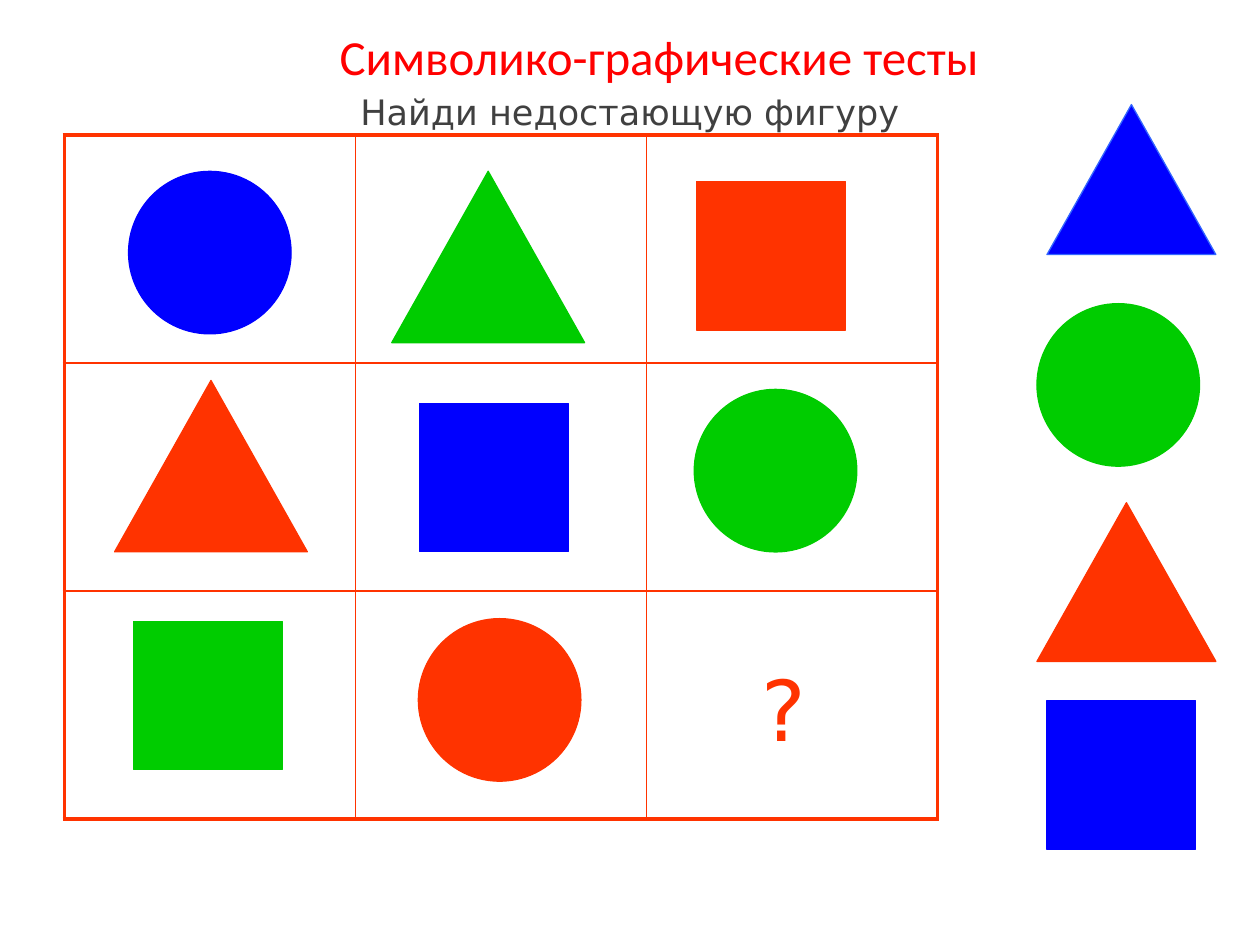
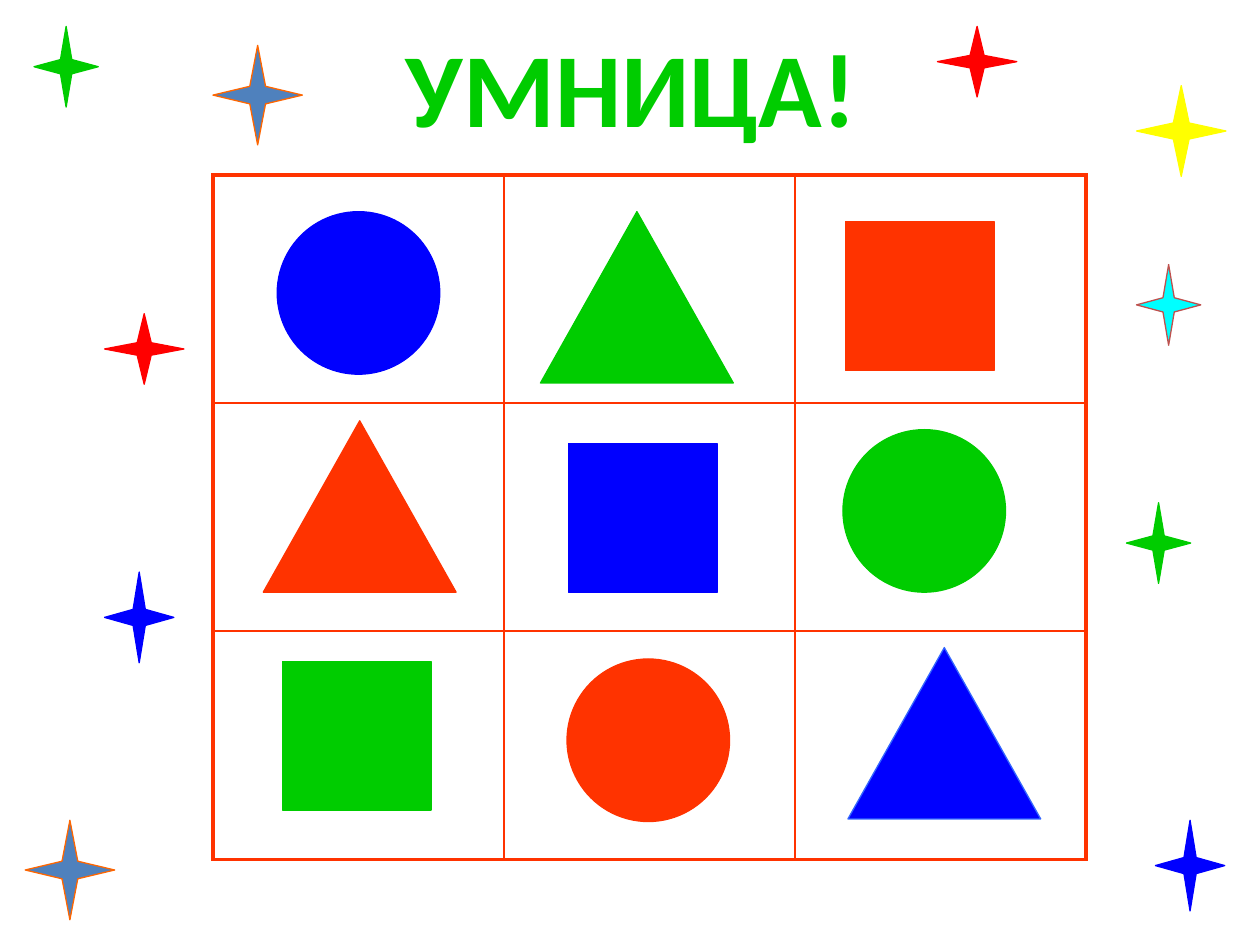
from lxml.etree import SubElement
from pptx import Presentation
from pptx.dml.color import RGBColor
from pptx.enum.shapes import MSO_SHAPE
from pptx.enum.text import MSO_ANCHOR, PP_ALIGN
from pptx.oxml.ns import qn
from pptx.util import Pt

PX = 9144  # 100 px to the inch
PAGE_SIZE = (1000, 750)

COLORS = {
    "white": "FFFFFF", "grey": "404040", "red": "FF0000", "scarlet": "FF3300",
    "green": "00CC00", "blue": "0000FF", "sky": "3366FF", "yellow": "FFFF00",
    "cyan": "00FFFF", "steel": "4F81BD", "orange": "FF6600", "brick": "C0504D",
}

GRID = 3
CELL_SIZE = (231, 181)
OUTER_LINE, INNER_LINE = 2.25, 1

KINDS = {
    "circle": (MSO_SHAPE.OVAL, (129, 129)),
    "square": (MSO_SHAPE.RECTANGLE, (118, 118)),
    "triangle": (MSO_SHAPE.ISOSCELES_TRIANGLE, (153, 136)),
}

# kind, fill, position from the board's corner
PUZZLE = [
    ("circle", "blue", (51, 29)),
    ("triangle", "green", (260, 29)),
    ("square", "scarlet", (502, 37)),
    ("triangle", "scarlet", (40, 195)),
    ("square", "blue", (282, 213)),
    ("circle", "green", (500, 202)),
    ("square", "green", (55, 386)),
    ("circle", "scarlet", (281, 384)),
]
SOLUTION = ("triangle", "blue", (504, 375))

# kind, fill, line, position, size
CHOICES = [
    ("triangle", "blue", "sky", (831, 83), (134, 119)),
    ("circle", "green", "green", (823, 241), (129, 129)),
    ("triangle", "scarlet", "scarlet", (823, 399), (142, 126)),
    ("square", "blue", "blue", (831, 556), (118, 118)),
]

# fill, line, size, positions
STARS = [
    ("red", "red", (63, 56), [(744, 21), (83, 249)]),
    ("blue", "blue", (55, 72), [(83, 454), (917, 651)]),
    ("yellow", "yellow", (71, 72), [(902, 68)]),
    ("green", "green", (51, 64), [(27, 21), (894, 399)]),
    ("steel", "orange", (71, 79), [(20, 651), (169, 36)]),
    ("cyan", "brick", (51, 64), [(902, 210)]),
]


def rgb(name):
    return RGBColor.from_string(COLORS[name])


def emu(*lengths):
    return [length * PX for length in lengths]


def write(box, text, *, size, color, font="Calibri", bold=False,
          anchor=MSO_ANCHOR.TOP, before=0):
    frame = box.text_frame
    frame.word_wrap = True
    frame.vertical_anchor = anchor
    para = frame.paragraphs[0]
    para.alignment = PP_ALIGN.CENTER
    para.space_before = Pt(before)
    span = para.add_run()
    span.text = text
    span.font.size = Pt(size)
    span.font.name = font
    span.font.bold = bold
    span.font.color.rgb = rgb(color)


def add_page(deck, title, place, **text_format):
    page = deck.slides.add_slide(deck.slide_layouts[5])
    box = page.shapes.title
    box.left, box.top, box.width, box.height = emu(*place)
    write(box, title, **text_format)
    return page


def add_label(page, text, place, **text_format):
    write(page.shapes.add_textbox(*emu(*place)), text, **text_format)


def add_figure(page, preset, fill, line, position, size):
    figure = page.shapes.add_shape(preset, *emu(*position, *size))
    figure.shadow.inherit = False
    figure.fill.solid()
    figure.fill.fore_color.rgb = rgb(fill)
    figure.line.color.rgb = rgb(line)
    figure.line.width = Pt(0.75)
    return figure


def set_borders(cell, widths):
    """Draw the cell's left, right, top and bottom lines, widths in points."""
    properties = cell._tc.get_or_add_tcPr()
    for index, (side, width) in enumerate(zip("LRTB", widths)):
        line = SubElement(properties, qn(f"a:ln{side}"), w=str(Pt(width)))
        fill = SubElement(line, qn("a:solidFill"))
        SubElement(fill, qn("a:srgbClr"), val=COLORS["scarlet"])
        properties.insert(index, line)


def add_board(page, corner, figures):
    """Draw the square grid with its figures placed from the corner."""
    size = [GRID * length for length in CELL_SIZE]
    table = page.shapes.add_table(GRID, GRID, *emu(*corner, *size)).table
    table.first_row = table.horz_banding = False
    for index in range(GRID):
        table.columns[index].width, table.rows[index].height = emu(*CELL_SIZE)
    for row in range(GRID):
        for column in range(GRID):
            cell = table.cell(row, column)
            cell.fill.solid()
            cell.fill.fore_color.rgb = rgb("white")
            edges = (column == 0, column == GRID - 1, row == 0, row == GRID - 1)
            set_borders(cell, [OUTER_LINE if edge else INNER_LINE for edge in edges])
    for kind, color, offset in figures:
        preset, figure_size = KINDS[kind]
        position = [start + step for start, step in zip(corner, offset)]
        line = "sky" if (kind, color) == ("triangle", "blue") else color
        add_figure(page, preset, color, line, position, figure_size)


def build_puzzle(deck):
    page = add_page(deck, "Символико-графические тесты", (195, 16, 656, 57),
                    size=28, color="red")
    add_label(page, "Найди недостающую фигуру", (75, 70, 850, 37), size=20,
              color="grey", font="DejaVu Sans", anchor=MSO_ANCHOR.MIDDLE)
    add_board(page, (51, 107), PUZZLE)
    for kind, fill, line, position, size in CHOICES:
        add_figure(page, KINDS[kind][0], fill, line, position, size)
    add_label(page, "?", (563, 517, 118, 90), size=48, color="scarlet",
              font="DejaVu Sans", before=3)


def build_answer(deck):
    page = add_page(deck, "УМНИЦА!", (130, 13, 742, 110),
                    size=60, color="green", bold=True, before=3)
    add_board(page, (169, 139), PUZZLE + [SOLUTION])
    for fill, line, size, positions in STARS:
        for position in positions:
            star = add_figure(page, MSO_SHAPE.STAR_4_POINT, fill, line, position, size)
            star.adjustments[0] = 0.125


def main():
    deck = Presentation()
    deck.slide_width, deck.slide_height = emu(*PAGE_SIZE)
    build_puzzle(deck)
    build_answer(deck)
    deck.save("out.pptx")


if __name__ == "__main__":
    main()
